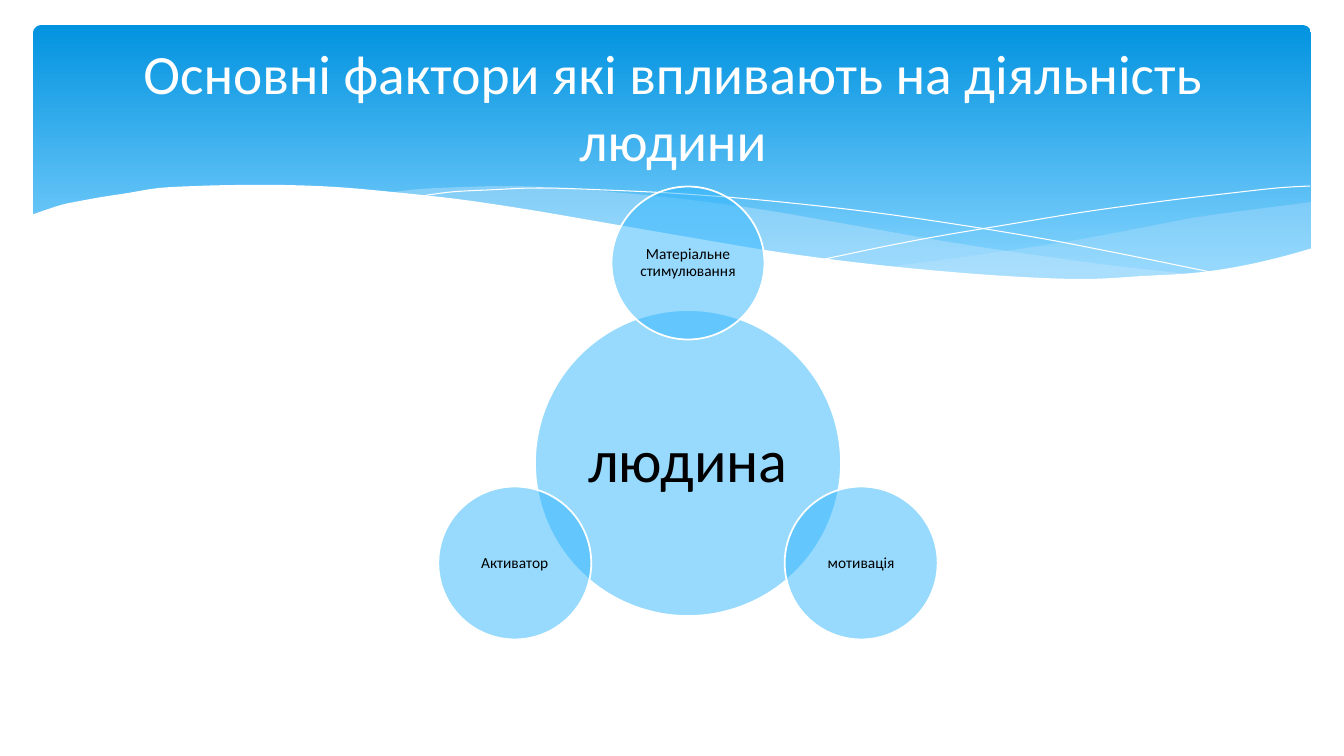
from math import cos, radians, sin

from lxml import etree
from pptx import Presentation
from pptx.dml.color import RGBColor
from pptx.enum.shapes import MSO_SHAPE
from pptx.enum.text import MSO_ANCHOR, MSO_AUTO_SIZE, PP_ALIGN
from pptx.oxml.ns import qn
from pptx.util import Emu, Pt

ELLIPSE = MSO_SHAPE.OVAL
ROUNDED = MSO_SHAPE.ROUNDED_RECTANGLE
CENTER = PP_ALIGN.CENTER
MIDDLE = MSO_ANCHOR.MIDDLE
NO_FIT = MSO_AUTO_SIZE.NONE
PX = 914400 / 100.8
TITLE_ONLY = 5
COLORS = {
    "white": "FFFFFF",
    "black": "000000",
    "band top": "0293E0",
    "band bottom": "83D3FE",
    "wave": "C6E7FC",
    "circle": "31B6FD",
}

RIGHT_WAVE = [
    [(1311, 202), (1257, 209), (1198, 217), (1156, 225), (1082, 239),
     (1013, 250), (949, 259), (889, 267)],
    [(889, 267), (947, 273), (1001, 277), (1049, 279), (1094, 280), (1136, 279),
     (1172, 278), (1206, 275), (1238, 271), (1267, 265), (1294, 259), (1311, 249)],
]
MIDDLE_WAVE = [
    [(385, 193), (420, 189), (463, 187), (510, 186), (564, 188), (624, 193),
     (691, 200), (765, 210), (846, 224), (949, 242), (1042, 256), (1125, 267),
     (1200, 275)],
    [(1200, 275), (1152, 279), (1099, 280), (1038, 279), (971, 275), (894, 268),
     (808, 257), (712, 242), (604, 224), (543, 213), (487, 205), (434, 198),
     (385, 193)],
]
FALLING_LINE = [
    [(415, 197), (451, 192), (488, 190), (539, 188), (605, 190), (685, 194),
     (781, 202), (893, 215), (1022, 235), (1117, 253), (1220, 274)],
]
RISING_LINE = [
    [(825, 259), (877, 248), (934, 237), (1005, 225), (1084, 212), (1164, 201),
     (1223, 194), (1277, 188), (1310, 186)],
]
FRONT_WAVE = [
    [(1313, 248), (1277, 258), (1236, 267), (1193, 273), (1143, 276), (1087, 279),
     (1023, 277), (952, 272), (870, 264), (778, 252), (676, 235), (601, 222),
     (525, 209), (457, 199), (393, 192), (336, 187), (284, 185), (237, 185),
     (196, 186), (159, 188), (128, 193), (102, 197), (80, 201), (61, 205),
     (31, 215)],
    [(31, 332), (1313, 332)],
]

HUB = (688, 463)
HUB_SIZE = 306
FACTOR_SIZE = 153
ORBIT = 200
FACTORS = ["Матеріальне стимулювання", "мотивація", "Активатор"]


def px(length):
    """Turn a length in px into EMU."""
    return Emu(round(length * PX))


def assign(target, values):
    """Set each attribute of the target from a dict."""
    for name, value in values.items():
        setattr(target, name, value)


def smooth(points, steps=5):
    """Return the points of a rounded curve through the given anchors."""
    ends = [points[0], *points, points[-1]]
    curve = [points[0]]
    for before, start, end, after in zip(ends, ends[1:], ends[2:], ends[3:]):
        for step in range(1, steps + 1):
            t = step / steps
            curve.append(tuple(
                b + t * (c - a) / 2
                + t ** 2 * (a - 2.5 * b + 2 * c - d / 2)
                + t ** 3 * (3 * (b - c) + d - a) / 2
                for a, b, c, d in zip(before, start, end, after)))
    return curve


class SlideBuilder:
    """Hold the style and the current slide."""

    def __init__(self, deck, font):
        """Add a title-only slide to the deck."""
        self.font = font
        self.slide = deck.slides.add_slide(deck.slide_layouts[TITLE_ONLY])
        self.shapes = self.slide.shapes

    def color(self, name):
        """Look up a colour by name."""
        return RGBColor.from_string(COLORS[name])

    def paint(self, shape, fill=None, opacity=100, line=None, width=0):
        """Set the fill and the outline of a shape."""
        shape.shadow.inherit = False
        if fill:
            shape.fill.solid()
            shape.fill.fore_color.rgb = self.color(fill)
            if opacity < 100:
                solid = shape._element.spPr.find(qn("a:solidFill"))
                etree.SubElement(solid[0], qn("a:alpha"), val=str(opacity * 1000))
        else:
            shape.fill.background()
        if line:
            shape.line.color.rgb = self.color(line)
            shape.line.width = Pt(width)
        else:
            shape.line.fill.background()

    def label(self, shape, text, size, color, inset, spacing):
        """Put one centred paragraph into a shape."""
        frame = shape.text_frame
        margins = ("margin_left", "margin_top", "margin_right", "margin_bottom")
        assign(frame, dict.fromkeys(margins, px(inset)))
        assign(frame, {"word_wrap": True, "auto_size": NO_FIT,
                       "vertical_anchor": MIDDLE})
        para = frame.paragraphs[0]
        assign(para, {"alignment": CENTER, "line_spacing": spacing})
        span = para.add_run()
        span.text = text
        assign(span.font, {"name": self.font, "size": Pt(size)})
        span.font.color.rgb = self.color(color)

    def band(self, left, top, width, height):
        """Add the rounded band with its gradient."""
        band = self.shapes.add_shape(ROUNDED, *map(px, (left, top, width, height)))
        band.adjustments[0] = 0.03
        self.paint(band)
        band.fill.gradient()
        band.fill.gradient_angle = 270
        stops = [(0, "band top"), (0.9, "band bottom")]
        for stop, (position, name) in zip(band.fill.gradient_stops, stops):
            stop.position = position
            stop.color.rgb = self.color(name)

    def wave(self, curves, close=True, **style):
        """Add an outline made of smooth curves."""
        points = [(px(x), px(y)) for curve in curves for x, y in smooth(curve)]
        builder = self.shapes.build_freeform(*points[0])
        builder.add_line_segments(points[1:], close=close)
        self.paint(builder.convert_to_shape(), **style)

    def title(self, text, left, top, width, height):
        """Place the title in front of the band."""
        box = self.shapes.title
        assign(box, {"left": px(left), "top": px(top),
                     "width": px(width), "height": px(height)})
        self.label(box, text, 39.6, "white", inset=5, spacing=1.0)
        self.shapes._spTree.append(box._element)

    def circle(self, text, center, diameter, size, inset):
        """Add a translucent circle with its label."""
        left, top = (middle - diameter / 2 for middle in center)
        circle = self.shapes.add_shape(
            ELLIPSE, *map(px, (left, top, diameter, diameter)))
        self.paint(circle, "circle", opacity=50, line="white", width=1.25)
        self.label(circle, text, size, "black", inset, spacing=0.9)


def main():
    """Build the slide and save the deck."""
    deck = Presentation()
    assign(deck, {"slide_width": px(1344), "slide_height": px(756)})
    page = SlideBuilder(deck, "Calibri")
    page.band(33, 25, 1278, 272)
    page.wave(RIGHT_WAVE, fill="wave", opacity=29)
    page.wave(MIDDLE_WAVE, fill="wave", opacity=40)
    for line in (FALLING_LINE, RISING_LINE):
        page.wave(line, close=False, line="white")
    page.wave(FRONT_WAVE, fill="white")
    page.title("Основні фактори які впливають на діяльність людини",
               68, 37, 1210, 138)
    page.circle("людина", HUB, HUB_SIZE, size=43, inset=6)
    for index, factor in enumerate(FACTORS):
        angle = radians(360 / len(FACTORS) * index - 90)
        center = (HUB[0] + ORBIT * cos(angle), HUB[1] + ORBIT * sin(angle))
        page.circle(factor, center, FACTOR_SIZE, size=11, inset=2)
    deck.save("out.pptx")


if __name__ == "__main__":
    main()
